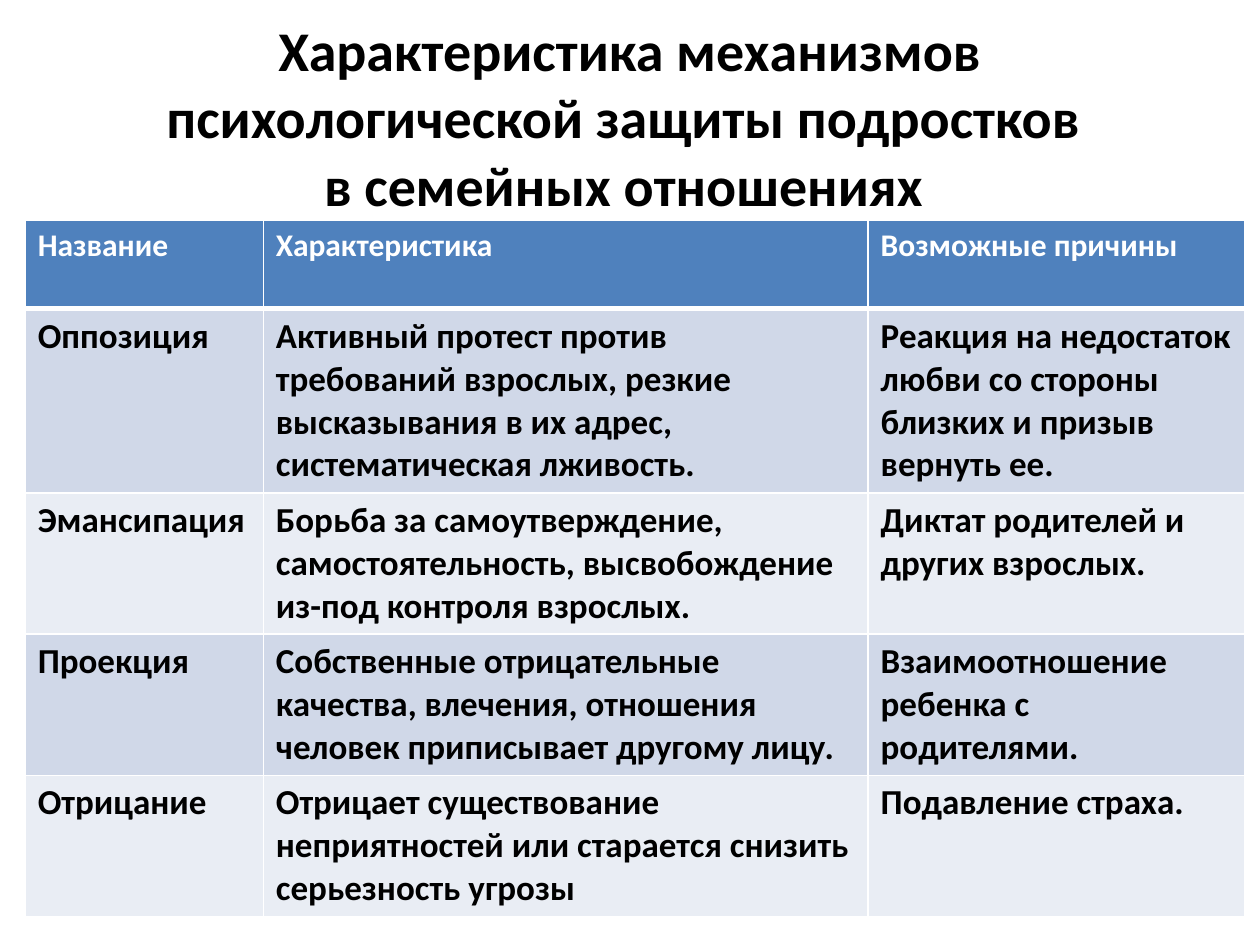
import pptx
import pptx.dml.color
import pptx.enum.text
import pptx.oxml
import pptx.oxml.ns
import pptx.util

TITLE = "Характеристика механизмов психологической защиты подростков \nв семейных отношениях "
ROWS = [
    ("Название", "Характеристика", "Возможные причины"),
    ("Оппозиция",
     "Активный протест против требований взрослых, резкие высказывания в их адрес, систематическая лживость.",
     "Реакция на недостаток любви со стороны близких и призыв вернуть ее."),
    ("Эмансипация",
     "Борьба за самоутверждение, самостоятельность, высвобождение из-под контроля взрослых.",
     "Диктат родителей и других взрослых."),
    ("Проекция",
     "Собственные отрицательные качества, влечения, отношения человек приписывает другому лицу.",
     "Взаимоотношение ребенка с родителями."),
    ("Отрицание",
     "Отрицает существование неприятностей или старается снизить серьезность угрозы",
     "Подавление страха."),
]
COL_WIDTHS = [1.89, 4.8, 2.99]
ROW_HEIGHTS = [0.7, 1.46, 1.12, 1.12, 1.12]


def rgb(value):
    return pptx.dml.color.RGBColor.from_string(value)


def write(tf, text, size=20, color="000000", bold=True, font="Calibri", align=None):
    p = tf.paragraphs[0]
    p.alignment = align
    for i, line in enumerate(text.split("\n")):
        if i:
            p.add_line_break()
        r = p.add_run()
        r.text = line
        r.font.size = pptx.util.Pt(size)
        r.font.bold = bold
        r.font.name = font
        r.font.color.rgb = rgb(color)


class Deck:
    header = "4F81BD"
    bands = ("D0D8E8", "E9EDF4")
    border = "FFFFFF"

    def __init__(self, width, height):
        self.prs = pptx.Presentation()
        self.prs.slide_width = pptx.util.Inches(width)
        self.prs.slide_height = pptx.util.Inches(height)
        self.s = self.prs.slides.add_slide(self.prs.slide_layouts[5])

    def box(self, x, y, w, h):
        sw, sh = self.prs.slide_width, self.prs.slide_height
        return int(x * sw), int(y * sh), int(w * sw), int(h * sh)

    def title(self, text, *shares):
        sp = self.s.shapes.title
        sp.left, sp.top, sp.width, sp.height = self.box(*shares)
        tf = sp.text_frame
        tf.word_wrap = True
        tf.auto_size = pptx.enum.text.MSO_AUTO_SIZE.NONE
        tf.vertical_anchor = pptx.enum.text.MSO_ANCHOR.MIDDLE
        write(tf, text, size=32, align=pptx.enum.text.PP_ALIGN.CENTER)

    def borders(self, cell, **widths):
        tc_pr = cell._tc.get_or_add_tcPr()
        for i, side in enumerate("LRTB"):
            tc_pr.insert(i, pptx.oxml.parse_xml(
                f'<a:ln{side} {pptx.oxml.ns.nsdecls("a")} w="{pptx.util.Pt(widths.get(side, 1))}">'
                f'<a:solidFill><a:srgbClr val="{self.border}"/></a:solidFill></a:ln{side}>'))

    def table(self, rows, widths, heights, *shares):
        table = self.s.shapes.add_table(len(rows), len(widths), *self.box(*shares)).table
        for column, width in zip(table.columns, widths):
            column.width = pptx.util.Inches(width)
        for i, (row, height, texts) in enumerate(zip(table.rows, heights, rows)):
            row.height = pptx.util.Inches(height)
            for cell, text in zip(row.cells, texts):
                cell.fill.solid()
                cell.fill.fore_color.rgb = rgb(self.bands[(i - 1) % 2] if i else self.header)
                self.borders(cell, T=3 if i == 1 else 1, B=1 if i else 3)
                if i:
                    write(cell.text_frame, text)
                else:
                    write(cell.text_frame, text, size=18, color="FFFFFF")


def main():
    deck = Deck(10, 7.5)
    deck.title(TITLE, 0.05, 0.04, 0.9, 1 / 6)
    deck.table(ROWS, COL_WIDTHS, ROW_HEIGHTS,
               0.02, 7 / 30, sum(COL_WIDTHS) / 10, sum(ROW_HEIGHTS) / 7.5)
    deck.prs.save("out.pptx")


if __name__ == "__main__":
    main()
